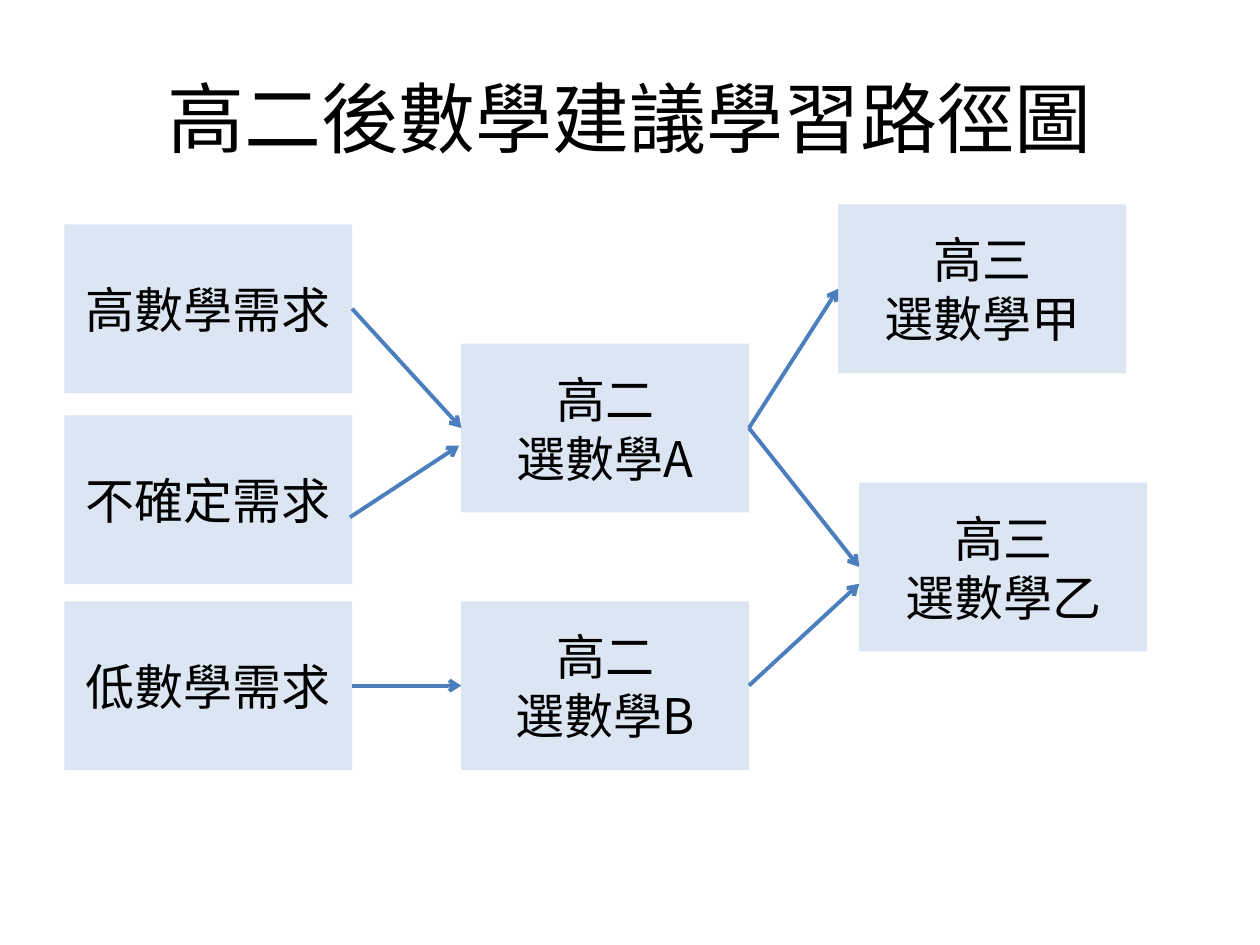
from lxml import etree
from pptx import Presentation
from pptx import util as u
from pptx.dml.color import RGBColor
from pptx.enum import shapes, text
from pptx.oxml.ns import qn

BLACK = RGBColor(0x00, 0x00, 0x00)
WHITE = RGBColor(0xFF, 0xFF, 0xFF)
PALE_BLUE = RGBColor(0xDC, 0xE6, 0xF2)
ARROW_BLUE = RGBColor(0x4B, 0x7E, 0xBC)
FONT = "Noto Sans CJK SC"

TITLE_FORMAT = {"name": FONT, "size": u.Pt(44)}
COURSE_FORMAT = {"name": FONT, "size": u.Pt(28)}
FRAME_FORMAT = {"word_wrap": True, "vertical_anchor": text.MSO_ANCHOR.MIDDLE}

# Course boxes: left and top inside the diagram, in points, and the lines of text
COURSE_WIDTH, COURSE_HEIGHT = 164.4, 96.4
COURSES = {
    "high": (0, 11.4, ["高數學需求"]),
    "unsure": (0, 120.6, ["不確定需求"]),
    "low": (0, 226.8, ["低數學需求"]),
    "math_a": (226.8, 79.6, ["高二", "選數學A"]),
    "math_b": (226.8, 226.8, ["高二", "選數學B"]),
    "advanced_a": (442.2, 0, ["高三", "選數學甲"]),
    "advanced_b": (454.2, 159, ["高三", "選數學乙"]),
}

# Paths: start, end, then the shifts of both ends from the middle of the sides
PATHS = [
    ("high", "math_a", (0, 0), (0, 0)),
    ("unsure", "math_a", (-1.2, 10), (-1.2, 10)),
    ("low", "math_b", (0, 0), (0, 0)),
    ("math_a", "advanced_a", (0, 0), (0, 0)),
    ("math_a", "advanced_b", (0, 0), (0, 0)),
    ("math_b", "advanced_b", (0, 0), (0, 9.6)),
]


def write_lines(shape, lines, font_format):
    frame = shape.text_frame
    for name, value in FRAME_FORMAT.items():
        setattr(frame, name, value)
    for index, line in enumerate(lines):
        paragraph = frame.add_paragraph() if index else frame.paragraphs[0]
        paragraph.alignment = text.PP_ALIGN.CENTER
        run = paragraph.add_run()
        run.text = line
        for name, value in font_format.items():
            setattr(run.font, name, value)
        run.font.color.rgb = BLACK
        # East Asian characters take their own typeface element
        east_asian = etree.SubElement(run.font._element, qn("a:ea"))
        east_asian.set("typeface", FONT)


def add_title(slide, left, top, width, height):
    title = slide.shapes.add_textbox(*map(u.Pt, (left, top, width, height)))
    write_lines(title, ["高二後數學建議學習路徑圖"], TITLE_FORMAT)


def add_course(slide, left, top, lines):
    course = slide.shapes.add_shape(
        shapes.MSO_SHAPE.RECTANGLE,
        *map(u.Pt, (left, top, COURSE_WIDTH, COURSE_HEIGHT)))
    course.shadow.inherit = False
    course.fill.solid()
    course.fill.fore_color.rgb = PALE_BLUE
    course.line.fill.background()
    write_lines(course, lines, COURSE_FORMAT)


def add_arrow(slide, start, end):
    arrow = slide.shapes.add_connector(
        shapes.MSO_CONNECTOR.STRAIGHT, *map(u.Pt, (*start, *end)))
    arrow.line.color.rgb = ARROW_BLUE
    arrow.line.width = u.Pt(2.25)
    etree.SubElement(arrow.line._get_or_add_ln(), qn("a:tailEnd"), type="arrow")
    etree.SubElement(arrow._element.spPr, qn("a:effectLst"))


def add_diagram(slide, left, top):
    # Course boxes
    for x, y, lines in COURSES.values():
        add_course(slide, left + x, top + y, lines)

    # Arrows from the right side of one box to the left side of the next
    middle = top + COURSE_HEIGHT / 2
    for source, target, (start_x, start_y), (end_x, end_y) in PATHS:
        source_x, source_y, _ = COURSES[source]
        target_x, target_y, _ = COURSES[target]
        start = (left + source_x + COURSE_WIDTH + start_x, middle + source_y + start_y)
        end = (left + target_x + end_x, middle + target_y + end_y)
        add_arrow(slide, start, end)


def main():
    presentation = Presentation()
    presentation.slide_width, presentation.slide_height = u.Pt(720), u.Pt(540)
    slide = presentation.slides.add_slide(presentation.slide_layouts[6])
    slide.background.fill.solid()
    slide.background.fill.fore_color.rgb = WHITE
    add_title(slide, 36, 21.6, 648, 90)
    add_diagram(slide, 36.8, 116.8)
    presentation.save("out.pptx")


if __name__ == "__main__":
    main()
